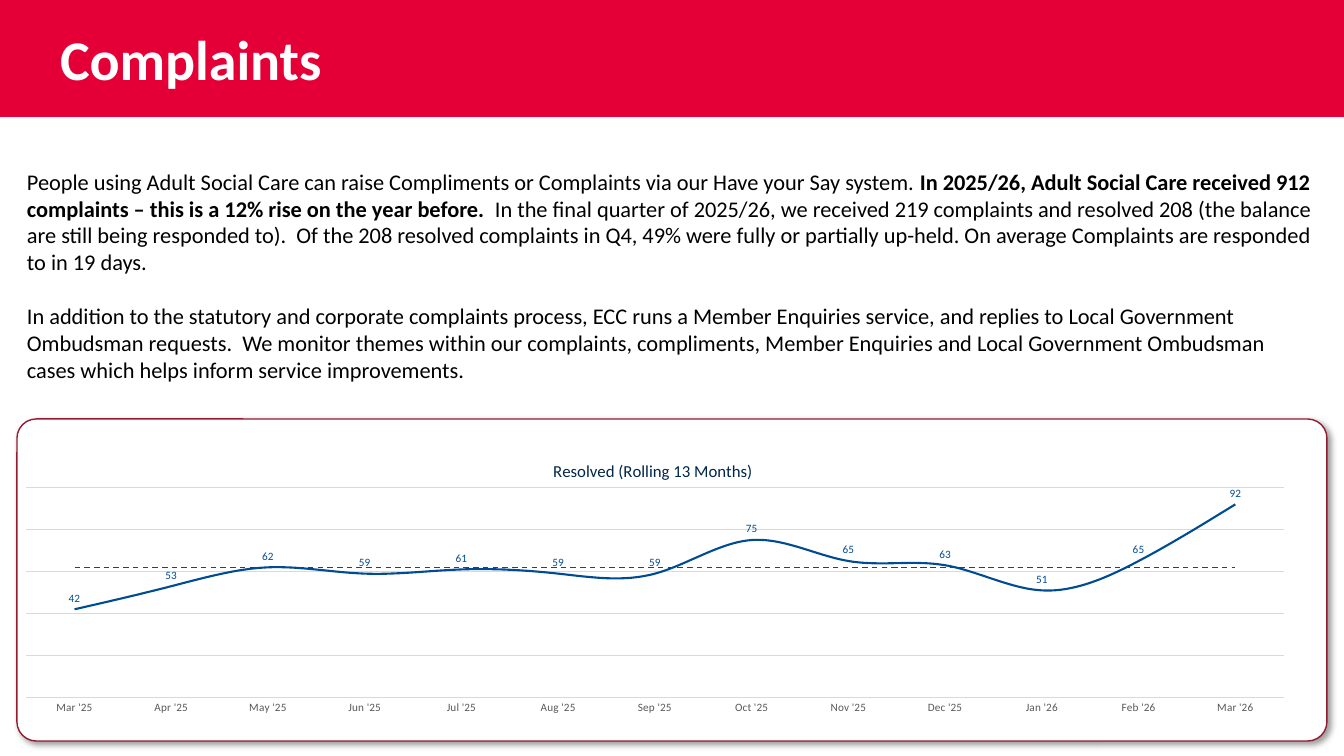
from lxml import etree
from pptx import Presentation
from pptx import util as u
from pptx.chart import data as chart_data
from pptx.dml.color import RGBColor
from pptx.enum import chart as ch, dml, shapes, text
from pptx.oxml import parse_xml
from pptx.oxml.ns import nsdecls, qn

PX = 9071
RED = RGBColor(0xE4, 0x00, 0x37)
MAROON = RGBColor(0x92, 0x1D, 0x33)
NAVY = RGBColor(0x00, 0x26, 0x4A)
BLUE = RGBColor(0x00, 0x4C, 0x94)
GREY = RGBColor(0x59, 0x59, 0x59)
PALE = RGBColor(0xD9, 0xD9, 0xD9)
BLACK = RGBColor(0x00, 0x00, 0x00)
WHITE = RGBColor(0xFF, 0xFF, 0xFF)


def write(para, wording, size=16, color=BLACK, bold=False):
    span = para.add_run()
    span.text = wording
    span.font.name = "Calibri"
    span.font.size = u.Pt(size)
    span.font.bold = bold
    span.font.color.rgb = color


def set_layout(parent, index, **values):
    for old in parent.findall(qn("c:layout")):
        parent.remove(old)
    layout = parse_xml(f"<c:layout {nsdecls('c')}><c:manualLayout/></c:layout>")
    for name, value in values.items():
        etree.SubElement(layout[0], qn(f"c:{name}")).set("val", str(value))
    parent.insert(index, layout)


deck = Presentation()
deck.slide_width = 1344 * PX
deck.slide_height = 756 * PX
page = deck.slides.add_slide(deck.slide_layouts[5])

title = page.shapes.title
title.left, title.top, title.width, title.height = 0, 0, 1344 * PX, 117 * PX
title.fill.solid()
title.fill.fore_color.rgb = RED
title.text_frame.margin_left = 60 * PX
title.text_frame.vertical_anchor = text.MSO_ANCHOR.MIDDLE
title.text_frame.auto_size = text.MSO_AUTO_SIZE.NONE
para = title.text_frame.paragraphs[0]
para.alignment = text.PP_ALIGN.LEFT
write(para, "Complaints", size=40, color=WHITE, bold=True)

card = page.shapes.add_shape(
    shapes.MSO_SHAPE.ROUNDED_RECTANGLE, 17 * PX, 419 * PX, 1310 * PX, 322 * PX)
card.adjustments[0] = 0.06
card.fill.solid()
card.fill.fore_color.rgb = WHITE
card.line.color.rgb = MAROON
card.line.width = u.Pt(1)
card.shadow.inherit = False
card.element.spPr.find(qn("a:effectLst")).append(parse_xml(
    f'<a:outerShdw {nsdecls("a")} blurRad="50800" dist="38100" dir="2700000" '
    'algn="tl" rotWithShape="0"><a:srgbClr val="000000"><a:alpha val="40000"/>'
    '</a:srgbClr></a:outerShdw>'))

box = page.shapes.add_textbox(17 * PX, 132 * PX, 1310 * PX, 287 * PX)
frame = box.text_frame
frame.word_wrap = True
frame.vertical_anchor = text.MSO_ANCHOR.MIDDLE
frame.margin_left = frame.margin_right = 10 * PX
frame.margin_top = frame.margin_bottom = 10 * PX
para = frame.paragraphs[0]
write(para, "People using Adult Social Care can raise Compliments or Complaints "
            "via our Have your Say system. ")
write(para, "In 2025/26, Adult Social Care received 912 complaints – this is a "
            "12% rise on the year before.", bold=True)
write(para, "  In the final quarter of 2025/26, we received 219 complaints and "
            "resolved 208 (the balance are still being responded to).  Of the 208 "
            "resolved complaints in Q4, 49% were fully or partially up-held. On "
            "average Complaints are responded to in 19 days.")
para = frame.add_paragraph()
para.space_before = u.Pt(19.5)
write(para, "In addition to the statutory and corporate complaints process, ECC "
            "runs a Member Enquiries service, and replies to Local Government "
            "Ombudsman requests.  We monitor themes within our complaints, "
            "compliments, Member Enquiries and Local Government Ombudsman cases "
            "which helps inform service improvements.")

resolved = [42, 53, 62, 59, 61, 59, 59, 75, 65, 63, 51, 65, 92]
data = chart_data.CategoryChartData()
data.categories = ["Mar '25", "Apr '25", "May '25", "Jun '25", "Jul '25", "Aug '25",
                   "Sep '25", "Oct '25", "Nov '25", "Dec '25", "Jan '26", "Feb '26",
                   "Mar '26"]
data.add_series("Series 1", resolved)
data.add_series("Series 2", [62] * len(resolved))
chart = page.shapes.add_chart(
    ch.XL_CHART_TYPE.LINE, 0, 440 * PX, 1310 * PX, 280 * PX, data).chart
chart.has_legend = False
chart.font.name = "Calibri"
chart.font.size = u.Pt(10)
chart.font.color.rgb = BLACK
chart.has_title = True
write(chart.chart_title.text_frame.paragraphs[0], "Resolved (Rolling 13 Months)",
      size=12, color=NAVY)
chart.chart_title.include_in_layout = False
set_layout(chart.chart_title._element, 1, xMode="edge", yMode="edge", x=0.42, y=0.06)
set_layout(chart._chartSpace.chart.plotArea, 0, layoutTarget="inner", xMode="edge",
           yMode="edge", x=0.02, y=0.17, w=0.96, h=0.75)

months = chart.category_axis
months.major_tick_mark = ch.XL_TICK_MARK.NONE
months.tick_labels.font.name = "Calibri"
months.tick_labels.font.size = u.Pt(8)
months.tick_labels.font.color.rgb = GREY
counts = chart.value_axis
counts.visible = False
counts.minimum_scale = 0
counts.maximum_scale = 100
counts.major_unit = 20
counts.has_major_gridlines = True
for line in (months.format.line, counts.major_gridlines.format.line):
    line.color.rgb = PALE
    line.width = u.Pt(0.75)

monthly, average = chart.plots[0].series
for series, width in ((monthly, 1.5), (average, 1)):
    series.smooth = series is monthly
    series.marker.style = ch.XL_MARKER_STYLE.NONE
    series.format.line.color.rgb = BLUE
    series.format.line.width = u.Pt(width)
average.format.line.dash_style = dml.MSO_LINE.DASH
labels = monthly.data_labels
labels.show_value = True
labels.position = ch.XL_LABEL_POSITION.ABOVE
labels.font.name = "Calibri"
labels.font.size = u.Pt(8)
labels.font.color.rgb = BLUE

deck.save("out.pptx")
